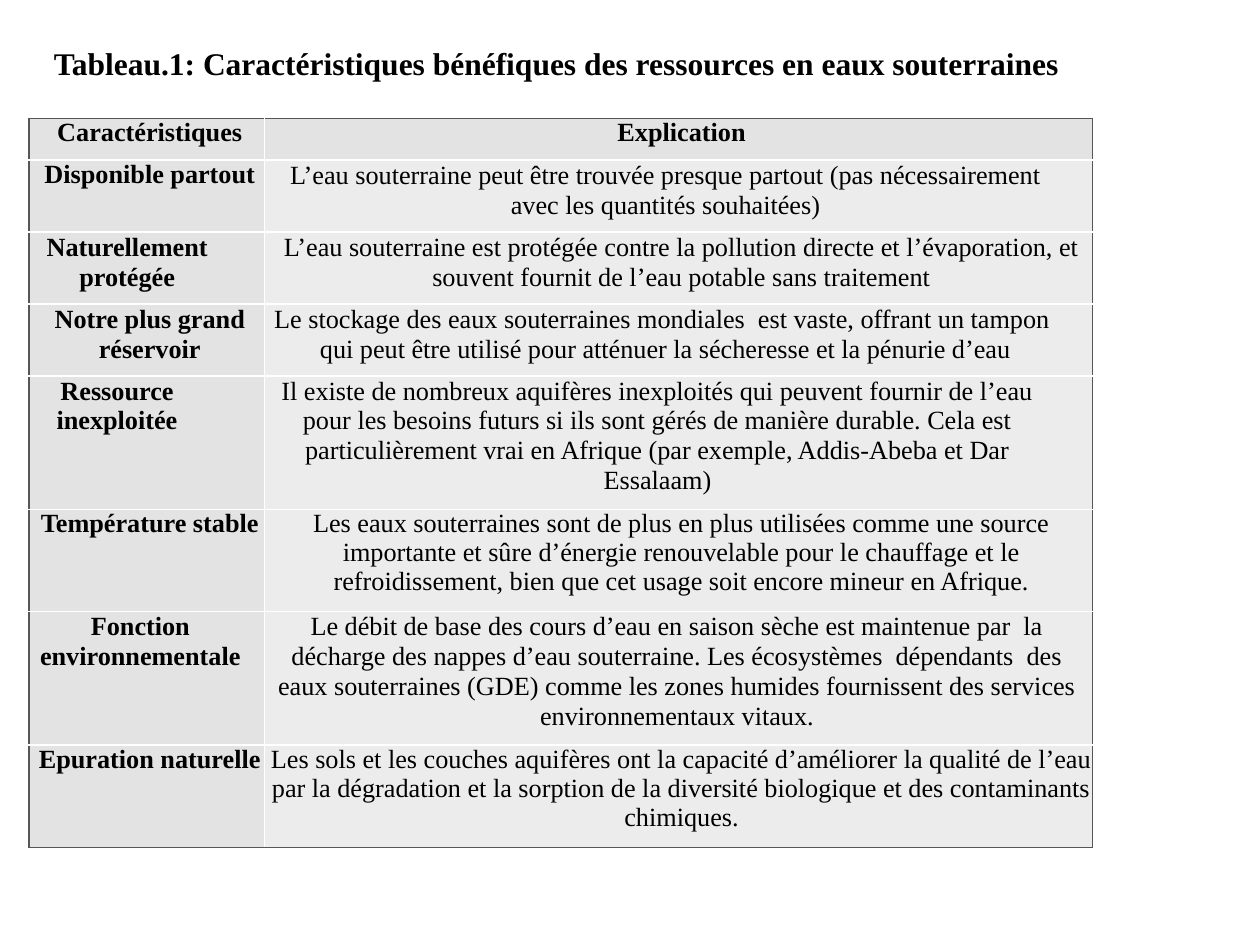
"""Build a slide with a table of the benefits of groundwater resources."""
from dataclasses import dataclass

import lxml.etree
import pptx
import pptx.dml.color
import pptx.enum.text
import pptx.oxml.ns
import pptx.util

Cm = pptx.util.Cm
Pt = pptx.util.Pt
FONT = "Times New Roman"
GREY, WHITE, BLACK = "575656", "FFFFFF", "000000"
HEAD_FILL, BODY_FILL = "E3E3E3", "ECECEC"
COL_WIDTHS = (4.75, 16.69)
LOOSE = 1.03


@dataclass
class Entry:
    text: str
    right: float = 0
    spacing: float | None = None


@dataclass
class Row:
    height: float
    label: Entry
    detail: Entry


ROWS = [
    Row(0.84, Entry("Caractéristiques"), Entry("Explication")),
    Row(1.45, Entry("Disponible partout"),
        Entry("L’eau souterraine peut être trouvée presque partout (pas nécessairement "
              "avec les quantités souhaitées)", 0.64, LOOSE)),
    Row(1.45, Entry("Naturellement protégée", 0.91, LOOSE),
        Entry("L’eau souterraine est protégée contre la pollution directe et l’évaporation, "
              "et souvent fournit de l’eau potable sans traitement", 0, LOOSE)),
    Row(1.45, Entry("Notre plus grand réservoir", 0, LOOSE),
        Entry("Le stockage des eaux souterraines mondiales  est vaste, offrant un tampon  "
              "qui peut être utilisé pour atténuer la sécheresse et la pénurie d’eau",
              0.64, LOOSE)),
    Row(2.69, Entry("Ressource inexploitée", 1.32, LOOSE),
        Entry("Il existe de nombreux aquifères inexploités qui peuvent fournir de l’eau "
              "pour les besoins futurs si ils sont gérés de manière durable. Cela est "
              "particulièrement vrai en Afrique (par exemple, Addis-Abeba et Dar Essalaam)",
              0.97, LOOSE)),
    Row(2.06, Entry("Température stable"),
        Entry("Les eaux souterraines sont de plus en plus utilisées comme une source "
              "importante et sûre d’énergie renouvelable pour le chauffage et le "
              "refroidissement, bien que cet usage soit encore mineur en Afrique.")),
    Row(2.69, Entry("Fonction environnementale", 0.38, LOOSE),
        Entry("Le débit de base des cours d’eau en saison sèche est maintenue par  la "
              "décharge des nappes d’eau souterraine. Les écosystèmes  dépendants  des "
              "eaux souterraines (GDE) comme les zones humides fournissent des services "
              "environnementaux vitaux.", 0.18, LOOSE)),
    Row(2.06, Entry("Epuration naturelle"),
        Entry("Les sols et les couches aquifères ont la capacité d’améliorer la qualité de "
              "l’eau par la dégradation et la sorption de la diversité biologique et des "
              "contaminants chimiques.")),
]


def rgb(value: str) -> pptx.dml.color.RGBColor:
    return pptx.dml.color.RGBColor.from_string(value)


def format_text(p, size: float, bold: bool) -> None:
    p.alignment = pptx.enum.text.PP_ALIGN.CENTER
    for r in p.runs:
        r.font.name = FONT
        r.font.size = Pt(size)
        r.font.bold = bold
        r.font.color.rgb = rgb(BLACK)


def set_borders(cell, colors: dict[str, str]) -> None:
    tc_pr = cell._tc.get_or_add_tcPr()
    qn = pptx.oxml.ns.qn
    for i, (side, color) in enumerate(colors.items()):
        ln = lxml.etree.Element(qn(f"a:ln{side}"), w=str(Pt(1)))
        fill = lxml.etree.SubElement(ln, qn("a:solidFill"))
        lxml.etree.SubElement(fill, qn("a:srgbClr"), val=color)
        tc_pr.insert(i, ln)


def fill_cell(cell, entry: Entry, bold: bool, fill: str) -> None:
    cell.margin_left = cell.margin_top = cell.margin_bottom = 0
    cell.margin_right = Cm(entry.right)
    cell.fill.solid()
    cell.fill.fore_color.rgb = rgb(fill)
    p = cell.text_frame.paragraphs[0]
    p.text = entry.text
    p.space_before = Pt(1.8)
    if entry.spacing:
        p.line_spacing = entry.spacing
    p._p.get_or_add_pPr().set("marL", str(Cm(0.13)))
    format_text(p, 15, bold)


def add_title(s) -> None:
    sp = s.shapes.title
    sp.left, sp.top, sp.width, sp.height = Cm(0.58), Cm(0.76), Cm(21.44), Cm(1.02)
    tf = sp.text_frame
    tf.text = "Tableau.1: Caractéristiques bénéfiques des ressources en eaux souterraines "
    tf.word_wrap = True
    tf.auto_size = pptx.enum.text.MSO_AUTO_SIZE.SHAPE_TO_FIT_TEXT
    tf.vertical_anchor = pptx.enum.text.MSO_ANCHOR.MIDDLE
    format_text(tf.paragraphs[0], 18, True)


def add_benefits(s) -> None:
    height = sum(row.height for row in ROWS)
    table = s.shapes.add_table(len(ROWS), len(COL_WIDTHS), Cm(0.58), Cm(2.39),
                               Cm(sum(COL_WIDTHS)), Cm(height)).table
    for column, width in zip(table.columns, COL_WIDTHS):
        column.width = Cm(width)
    last = len(ROWS) - 1
    for i, row in enumerate(ROWS):
        table.rows[i].height = Cm(row.height)
        for j, entry in enumerate((row.label, row.detail)):
            head = i == 0 or j == 0
            cell = table.cell(i, j)
            fill_cell(cell, entry, head, HEAD_FILL if head else BODY_FILL)
            outer = {"L": j == 0, "R": j == 1, "T": i == 0, "B": i == last}
            set_borders(cell, {side: GREY if edge else WHITE
                               for side, edge in outer.items()})


def main() -> None:
    prs = pptx.Presentation()
    prs.slide_width, prs.slide_height = Cm(25.4), Cm(19.05)
    s = prs.slides.add_slide(prs.slide_layouts[5])
    add_title(s)
    add_benefits(s)
    prs.save("out.pptx")


if __name__ == "__main__":
    main()
